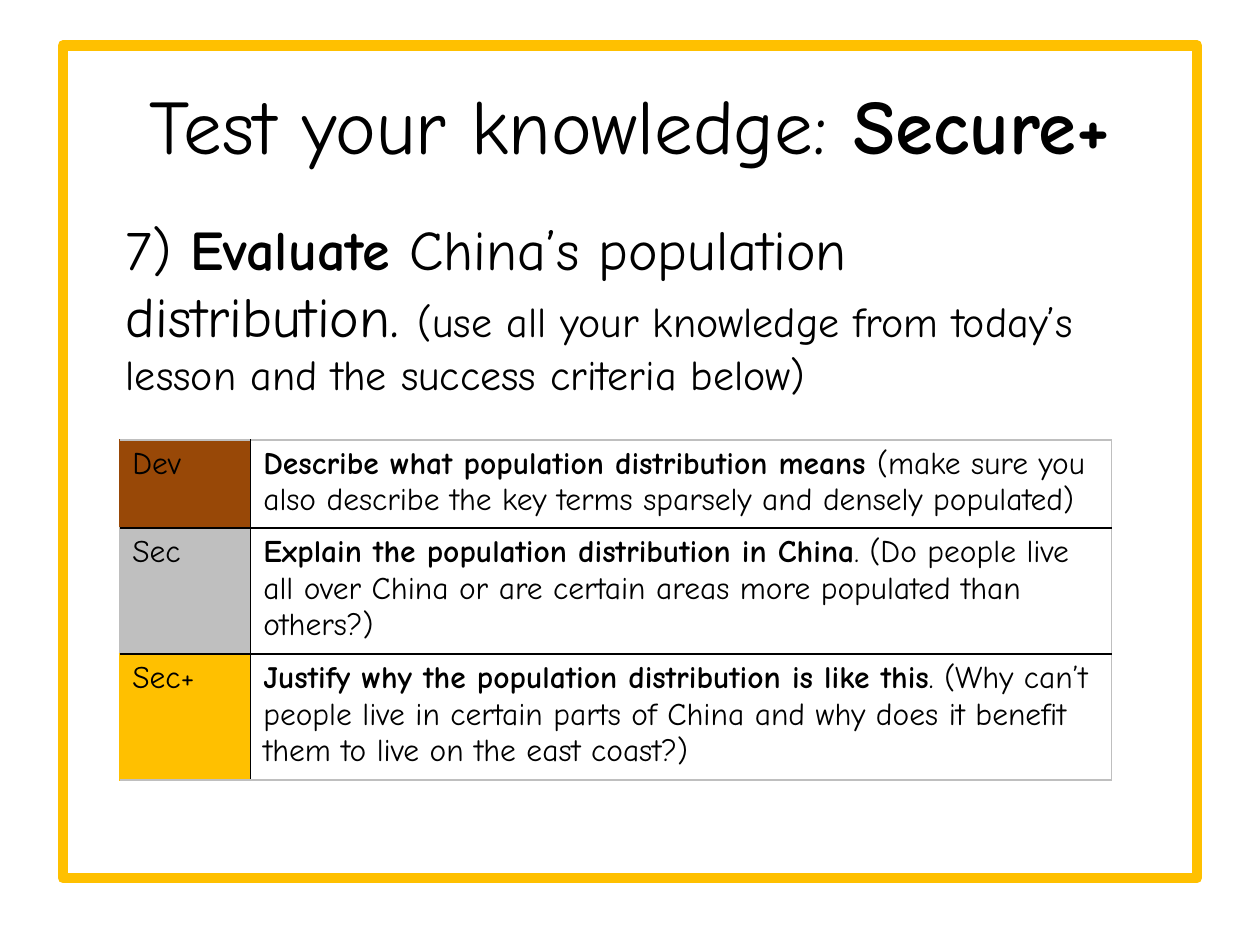
"""Build a quiz slide with a question and a table of success criteria."""
from dataclasses import dataclass

from lxml import etree
from pptx import Presentation, util as u
from pptx.dml.color import RGBColor
from pptx.enum import shapes, text
from pptx.oxml import ns

FONT = "Comic Neue"
BLACK = RGBColor(0x00, 0x00, 0x00)
WHITE = RGBColor(0xFF, 0xFF, 0xFF)
GOLD = RGBColor(0xFF, 0xC0, 0x00)
SILVER = RGBColor(0xBF, 0xBF, 0xBF)
BRONZE = RGBColor(0x98, 0x48, 0x07)


@dataclass(frozen=True)
class Run:
    text: str
    size: int
    bold: bool = False


@dataclass(frozen=True)
class Criterion:
    level: str
    fill: RGBColor
    task: str
    hint: str
    height: float


CRITERIA = [
    Criterion("Dev", BRONZE, "Describe what population distribution means ",
              "(make sure you also describe the key terms sparsely and densely populated)", 0.68),
    Criterion("Sec", SILVER, "Explain the population distribution in China",
              ". (Do people live all over China or are certain areas more populated than others?)",
              0.96),
    Criterion("Sec+", GOLD, "Justify why the population distribution is like this",
              ". (Why can’t people live in certain parts of China and why does it benefit them "
              "to live on the east coast?)", 0.97),
]


def write(tf, runs: list[Run]) -> None:
    """Fill the first paragraph of a text frame with formatted runs."""
    p = tf.paragraphs[0]
    for run in runs:
        r = p.add_run()
        r.text = run.text
        r.font.name = FONT
        r.font.size = u.Pt(run.size)
        r.font.bold = run.bold
        r.font.color.rgb = BLACK


def add_frame(s) -> None:
    """Place the gold frame behind everything else."""
    sp = s.shapes.add_shape(shapes.MSO_SHAPE.RECTANGLE, u.Inches(0.5), u.Inches(0.36),
                            u.Inches(9), u.Inches(6.61))
    sp.shadow.inherit = False
    sp.fill.solid()
    sp.fill.fore_color.rgb = WHITE
    sp.line.color.rgb = GOLD
    sp.line.width = u.Pt(6)
    s.shapes.element.insert(2, sp.element)


def add_title(s) -> None:
    """Move and fill the title placeholder."""
    sp = s.shapes.title
    sp.left, sp.top = u.Inches(0.5), u.Inches(0.36)
    sp.width, sp.height = u.Inches(9), u.Inches(1.25)
    sp.text_frame.vertical_anchor = text.MSO_ANCHOR.MIDDLE
    sp.text_frame.paragraphs[0].alignment = text.PP_ALIGN.CENTER
    write(sp.text_frame, [Run("Test your knowledge: ", 44), Run("Secure+", 44, True)])


def add_question(s) -> None:
    """Add the question text."""
    sp = s.shapes.add_textbox(u.Inches(0.9), u.Inches(1.65), u.Inches(7.97), u.Inches(1.75))
    sp.text_frame.word_wrap = True
    write(sp.text_frame, [
        Run("7) ", 32),
        Run("Evaluate", 32, True),
        Run(" China’s population distribution. ", 32),
        Run("(use all your knowledge from today’s lesson and the success criteria below)", 24),
    ])


def set_borders(cell, colors: dict[str, RGBColor]) -> None:
    """Draw one-point borders on the named sides of a cell."""
    props = cell._tc.get_or_add_tcPr()
    for i, (side, color) in enumerate(colors.items()):
        ln = etree.Element(ns.qn(f"a:ln{side}"), w=str(u.Pt(1)))
        fill = etree.SubElement(ln, ns.qn("a:solidFill"))
        etree.SubElement(fill, ns.qn("a:srgbClr"), val=str(color))
        props.insert(i, ln)


def add_criteria(s) -> None:
    """Add the table with one row per criterion."""
    height = sum(c.height for c in CRITERIA)
    table = s.shapes.add_table(len(CRITERIA), 2, u.Inches(0.95), u.Inches(3.49),
                               u.Inches(7.87), u.Inches(height)).table
    table.first_row = table.horz_banding = False
    for column, width in zip(table.columns, (1.04, 6.83)):
        column.width = u.Inches(width)
    for i, c in enumerate(CRITERIA):
        table.rows[i].height = u.Inches(c.height)
        level, task = table.cell(i, 0), table.cell(i, 1)
        level.fill.solid()
        level.fill.fore_color.rgb = c.fill
        task.fill.background()
        write(level.text_frame, [Run(c.level, 18)])
        write(task.text_frame, [Run(c.task, 18, True), Run(c.hint, 18)])
        top = SILVER if i == 0 else BLACK
        bottom = SILVER if i == len(CRITERIA) - 1 else BLACK
        set_borders(level, {"L": c.fill, "R": BLACK, "T": top, "B": bottom})
        set_borders(task, {"L": BLACK, "R": SILVER, "T": top, "B": bottom})


def main() -> None:
    """Build and save the slide."""
    prs = Presentation()
    prs.slide_width, prs.slide_height = u.Inches(10), u.Inches(7.5)
    s = prs.slides.add_slide(prs.slide_layouts[5])
    add_frame(s)
    add_title(s)
    add_question(s)
    add_criteria(s)
    prs.save("out.pptx")


if __name__ == "__main__":
    main()
